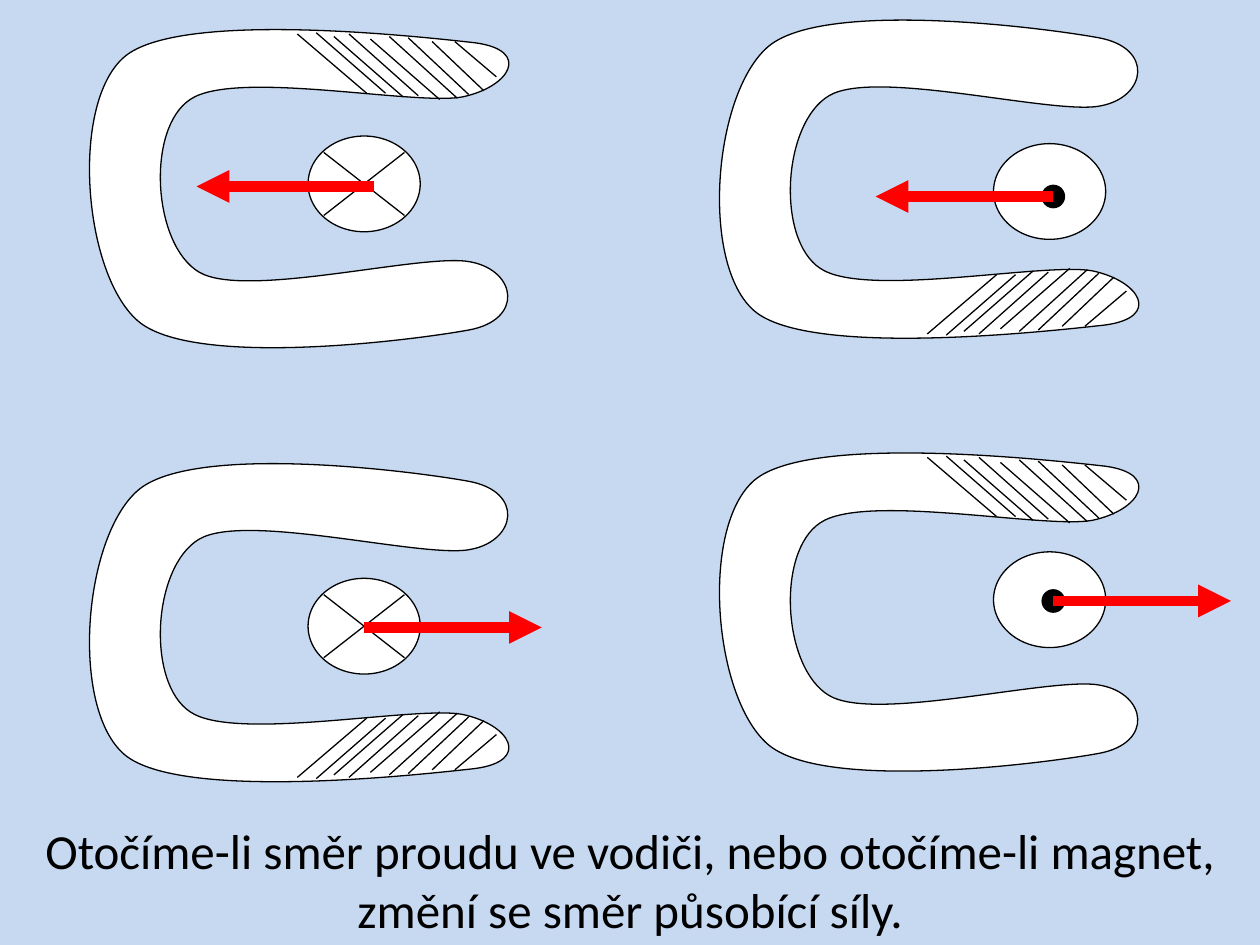
import pptx
import pptx.util
import pptx.dml.color
import pptx.enum.shapes
import pptx.enum.text
import pptx.oxml
import pptx.oxml.ns

WIDTH, HEIGHT = 10, 7.5
COLUMN = WIDTH / 2
BLACK, WHITE, RED, SKY = "000000", "FFFFFF", "FF0000", "C6D9F1"

# Horseshoe outline: start point, then three Bezier points per curve.
HORSESHOE = [
    (3.72, 0.3),
    (3.28, 0.22), (1.57, 0), (1.11, 0.36),
    (0.66, 0.72), (0.55, 2.1), (0.99, 2.47),
    (1.43, 2.84), (3.32, 2.63), (3.77, 2.58),
    (4.22, 2.52), (4.05, 2.23), (3.67, 2.15),
    (3.29, 2.08), (1.86, 2.37), (1.51, 2.13),
    (1.16, 1.9), (1.21, 0.98), (1.58, 0.76),
    (1.95, 0.54), (3.38, 0.92), (3.74, 0.84),
    (4.1, 0.77), (4.16, 0.38), (3.72, 0.3),
]
# Hatching of one pole: inner end, outer end.
HATCHING = [
    ((2.91, 2.18), (2.36, 2.65)), ((3.06, 2.18), (2.51, 2.66)),
    ((3.2, 2.15), (2.65, 2.63)), ((3.32, 2.16), (2.77, 2.65)),
    ((3.49, 2.13), (2.94, 2.61)), ((3.63, 2.14), (3.09, 2.63)),
    ((3.72, 2.17), (3.24, 2.62)), ((3.84, 2.2), (3.43, 2.59)),
    ((3.94, 2.31), (3.61, 2.59)),
]
# Column, edge of the plain pole, hatched side (1 below, -1 above),
# conductor centre, current into the slide, arrow start, force direction.
CASES = [
    (0, 3.52, 1, (2.89, 4.97), True, (2.89, 4.98), 1),
    (0, 2.92, -1, (2.89, 1.46), True, (2.97, 1.48), -1),
    (1, 6.28, -1, (8.33, 4.76), False, (8.36, 4.77), 1),
    (1, 0, 1, (8.33, 1.52), False, (8.36, 1.56), -1),
]
FORCE = 1.41


def inch(value):
    return pptx.util.Inches(value)


def rgb(code):
    return pptx.dml.color.RGBColor.from_string(code)


def paint(sp, fill, weight=0.75):
    sp.shadow.inherit = False
    sp.fill.solid()
    sp.fill.fore_color.rgb = rgb(fill)
    sp.line.color.rgb = rgb(BLACK)
    sp.line.width = pptx.util.Pt(weight)


def add_line(shapes, start, end, color=BLACK, weight=0.75):
    sp = shapes.add_connector(pptx.enum.shapes.MSO_CONNECTOR.STRAIGHT,
                              *map(inch, start + end))
    sp.line.color.rgb = rgb(color)
    sp.line.width = pptx.util.Pt(weight)
    pptx.oxml.ns.qn("a:effectLst")
    sp._element.spPr.append(pptx.oxml.parse_xml(
        "<a:effectLst %s/>" % pptx.oxml.ns.nsdecls("a")))
    return sp


def add_disc(shapes, center, width, height, fill, weight=0.75):
    sp = shapes.add_shape(pptx.enum.shapes.MSO_SHAPE.OVAL,
                          inch(center[0] - width / 2), inch(center[1] - height / 2),
                          inch(width), inch(height))
    paint(sp, fill, weight)


def add_curve(shapes, points):
    """Closed outline whose corner points are taken three by three as Bezier points."""
    points = [(inch(x), inch(y)) for x, y in points]
    builder = shapes.build_freeform(*points[0])
    builder.add_line_segments(points[1:], close=True)
    sp = builder.convert_to_shape()
    qn = pptx.oxml.ns.qn
    path = sp._element.find(".//" + qn("a:path"))
    segments = path.findall(qn("a:lnTo"))
    for i in range(0, len(segments), 3):
        curve = pptx.oxml.parse_xml(
            "<a:cubicBezTo %s/>" % pptx.oxml.ns.nsdecls("a"))
        segments[i].addprevious(curve)
        for segment in segments[i:i + 3]:
            curve.append(segment[0])
            path.remove(segment)
    paint(sp, WHITE)


def add_magnet(shapes, column, edge, side):
    def place(point):
        return column * COLUMN + point[0], edge + side * point[1]

    add_curve(shapes, [place(point) for point in HORSESHOE])
    for inner, outer in HATCHING:
        add_line(shapes, place(inner), place(outer))


def add_conductor(shapes, center, inward, dot):
    """Round wire with a cross for current going in, a dot for current coming out."""
    x, y = center
    add_disc(shapes, center, 0.89, 0.76, WHITE)
    if inward:
        for dy in (0.25, -0.25):
            add_line(shapes, (x - 0.32, y - dy), (x + 0.32, y + dy))
    else:
        add_disc(shapes, dot, 0.16, 0.16, BLACK, 2)


def add_force(shapes, start, direction):
    tip = (start[0] + direction * FORCE, start[1])
    sp = add_line(shapes, tip, start, RED, 6.25)
    sp.line._get_or_add_ln().append(pptx.oxml.parse_xml(
        '<a:headEnd %s type="triangle"/>' % pptx.oxml.ns.nsdecls("a")))


def add_caption(shapes, text):
    top = 6.46
    sp = shapes.add_textbox(0, inch(top), inch(WIDTH), inch(HEIGHT - top))
    tf = sp.text_frame
    tf.word_wrap = True
    tf.auto_size = pptx.enum.text.MSO_AUTO_SIZE.SHAPE_TO_FIT_TEXT
    tf.vertical_anchor = pptx.enum.text.MSO_ANCHOR.MIDDLE
    p = tf.paragraphs[0]
    p.text = text
    p.alignment = pptx.enum.text.PP_ALIGN.CENTER
    p.font.name = "Calibri"
    p.font.size = pptx.util.Pt(28)
    p.font.color.rgb = rgb(BLACK)


def main():
    prs = pptx.Presentation()
    prs.slide_width, prs.slide_height = inch(WIDTH), inch(HEIGHT)
    s = prs.slides.add_slide(prs.slide_layouts[6])
    s.background.fill.solid()
    s.background.fill.fore_color.rgb = rgb(SKY)

    add_caption(s.shapes, "Otočíme-li směr proudu ve vodiči, nebo otočíme-li magnet, "
                          "změní se směr působící síly.")
    for column, edge, side, center, inward, start, direction in CASES:
        group = s.shapes.add_group_shape()
        add_magnet(group.shapes, column, edge, side)
        add_conductor(group.shapes, center, inward, start)
        add_force(s.shapes, start, direction)

    prs.save("out.pptx")


if __name__ == "__main__":
    main()
